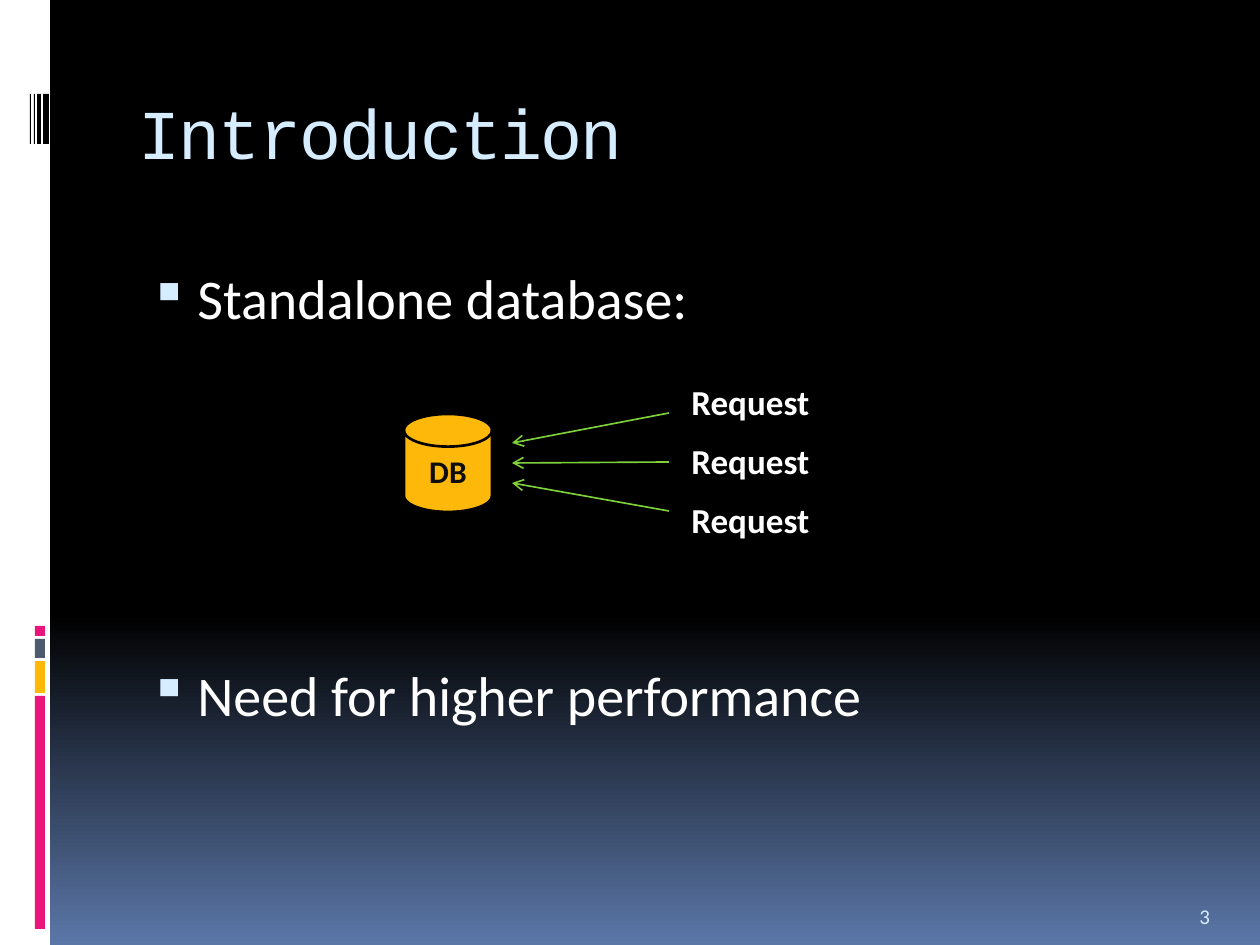
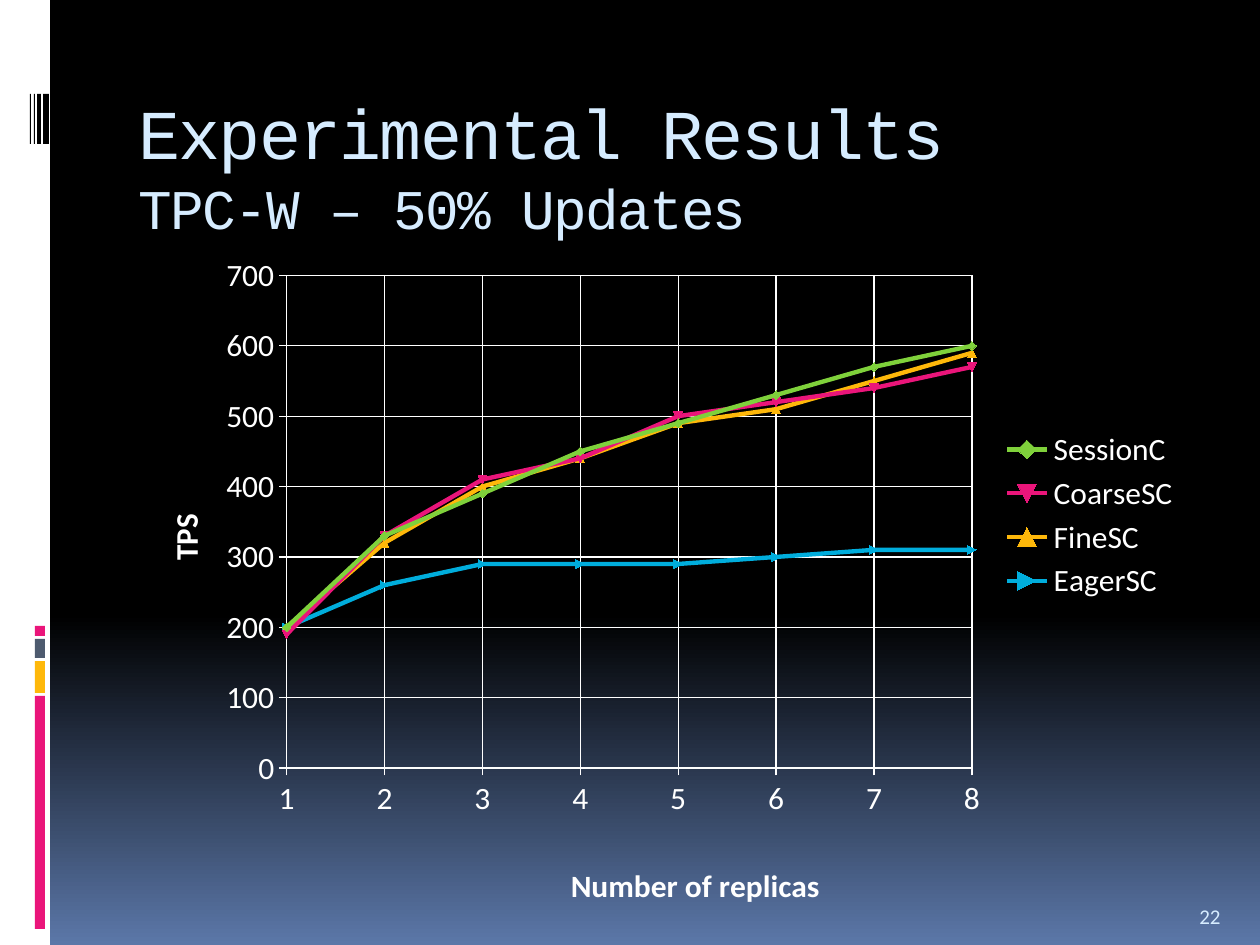
from lxml import etree
from pptx import Presentation
from pptx.chart.data import XyChartData
from pptx.dml.color import RGBColor
from pptx.enum.chart import XL_CHART_TYPE, XL_LEGEND_POSITION, XL_TICK_MARK
from pptx.enum.shapes import MSO_CONNECTOR, MSO_SHAPE
from pptx.enum.text import MSO_ANCHOR, PP_ALIGN
from pptx.oxml.ns import qn
from pptx.util import Emu, Pt

# Scale: 126 px to the inch
PX = 914400 / 126
SLIDE_W, SLIDE_H = 1260, 945

# Colours and fonts
BLACK = RGBColor(0x00, 0x00, 0x00)
WHITE = RGBColor(0xFF, 0xFF, 0xFF)
NAVY = RGBColor(0x5B, 0x77, 0xA8)
SLATE = RGBColor(0x4E, 0x5B, 0x6F)
PALE_BLUE = RGBColor(0xD6, 0xEC, 0xFF)
PINK = RGBColor(0xEA, 0x15, 0x7A)
AMBER = RGBColor(0xFE, 0xB8, 0x0A)
GREEN = RGBColor(0x7F, 0xD1, 0x3B)
CYAN = RGBColor(0x00, 0xAD, 0xDC)
INK = RGBColor(0x0D, 0x0D, 0x0D)
BODY_FONT, TITLE_FONT = "Calibri", "Courier New"

# Enum members
RECT, DISK = MSO_SHAPE.RECTANGLE, MSO_SHAPE.FLOWCHART_MAGNETIC_DISK
STRAIGHT = MSO_CONNECTOR.STRAIGHT
TOP, MIDDLE, BOTTOM = MSO_ANCHOR.TOP, MSO_ANCHOR.MIDDLE, MSO_ANCHOR.BOTTOM
CENTER = PP_ALIGN.CENTER
SCATTER = XL_CHART_TYPE.XY_SCATTER_LINES
LEGEND_BOTTOM = XL_LEGEND_POSITION.BOTTOM
TICK_OUT, TICK_NONE = XL_TICK_MARK.OUTSIDE, XL_TICK_MARK.NONE

# Text formats
TITLE = dict(name=TITLE_FONT, size=Pt(40))
SUBTITLE = dict(name=TITLE_FONT, size=Pt(32))
BODY = dict(name=BODY_FONT, size=Pt(32))
REQUEST = dict(name=BODY_FONT, size=Pt(20), bold=True)
DB_LABEL = dict(name=BODY_FONT, size=Pt(18), bold=True)
CHART_TEXT = dict(name=BODY_FONT, size=Pt(18))
AXIS_TITLE = dict(CHART_TEXT, bold=True)
PAGE_NO = dict(name=BODY_FONT, size=Pt(12))

# Side band: accent blocks as (top, height, colour), barcode as (left, width)
ACCENTS = [(696, 233, PINK), (661, 32, AMBER), (639, 19, SLATE), (626, 10, PINK)]
BARCODE = [(43, 6), (37, 4), (34, 1), (30, 1)]

# Throughput for 1 to 8 replicas
THROUGHPUT = [
    ("SessionC", GREEN, (200, 330, 390, 450, 490, 530, 570, 600)),
    ("CoarseSC", PINK, (190, 330, 410, 440, 500, 520, 540, 570)),
    ("FineSC", AMBER, (200, 320, 400, 440, 490, 510, 550, 590)),
    ("EagerSC", CYAN, (200, 260, 290, 290, 290, 300, 310, 310)),
]


def px(n):
    return Emu(round(n * PX))


def box(*lengths):
    return [px(n) for n in lengths]


def set_font(font, fmt, color):
    for key, value in fmt.items():
        setattr(font, key, value)
    font.color.rgb = color


def add_run(p, text, fmt, color):
    r = p.add_run()
    r.text = text
    set_font(r.font, fmt, color)
    return r


def add_block(slide, rect, fill, kind=RECT):
    sp = slide.shapes.add_shape(kind, *box(*rect))
    sp.shadow.inherit = False
    sp.fill.solid()
    sp.fill.fore_color.rgb = fill
    sp.line.fill.background()
    return sp


def add_textbox(slide, rect, anchor=TOP, inset_top=6):
    tf = slide.shapes.add_textbox(*box(*rect)).text_frame
    tf.word_wrap = True
    tf.vertical_anchor = anchor
    tf.margin_top = px(inset_top)
    return tf


def add_label(slide, rect, text, fmt, color, anchor=TOP):
    add_run(add_textbox(slide, rect, anchor).paragraphs[0], text, fmt, color)


def add_title(slide, title, subtitle=None):
    p = add_textbox(slide, (126, 70, 1071, 165), inset_top=20).paragraphs[0]
    runs = [add_run(p, title, TITLE, PALE_BLUE)]
    if subtitle:
        p.add_line_break()
        runs.append(add_run(p, subtitle, SUBTITLE, PALE_BLUE))
    for r in runs:
        r.font._element.set("spc", "-100")


def add_slide(prs, number, title, subtitle=None):
    """Slide with the shared background, side band, title and page number."""
    slide = prs.slides.add_slide(prs.slide_layouts[6])
    fill = slide.background.fill
    fill.gradient()
    fill.gradient_angle = 270
    for stop, position, color in zip(fill.gradient_stops, (0.65, 1), (BLACK, NAVY)):
        stop.position = position
        stop.color.rgb = color
    add_block(slide, (0, 0, 50, SLIDE_H), WHITE)
    for top, height, color in ACCENTS:
        add_block(slide, (35, top, 10, height), color)
    for left, width in BARCODE:
        add_block(slide, (left, 94, width, 50), BLACK)
    add_title(slide, title, subtitle)
    add_label(slide, (1187, 885, 63, 50), str(number), PAGE_NO, PALE_BLUE, BOTTOM)
    return slide


def add_bullet(p, text, space_before):
    add_run(p, text, BODY, WHITE)
    p.space_before = space_before
    pPr = p._p.get_or_add_pPr()
    pPr.set("marL", str(px(57)))
    pPr.set("indent", str(-px(48)))
    clr = etree.SubElement(pPr, qn("a:buClr"))
    etree.SubElement(clr, qn("a:srgbClr"), val=str(PALE_BLUE))
    etree.SubElement(pPr, qn("a:buSzPct"), val="95000")
    etree.SubElement(pPr, qn("a:buChar"), char="▪")


def add_arrow(slide, start, end):
    line = slide.shapes.add_connector(STRAIGHT, *box(*start, *end))
    line.line.color.rgb = GREEN
    line.line.width = Pt(0.94)
    etree.SubElement(line.line._get_or_add_ln(), qn("a:tailEnd"), type="arrow")
    etree.SubElement(line._element.spPr, qn("a:effectLst"))


def add_database(slide, rect, text):
    sp = add_block(slide, rect, AMBER, DISK)
    sp.line.color.rgb = BLACK
    sp.line.width = Pt(1.5)
    tf = sp.text_frame
    tf.vertical_anchor = MIDDLE
    p = tf.paragraphs[0]
    p.alignment = CENTER
    add_run(p, text, DB_LABEL, INK)


def set_layout(element, inner=False, **fractions):
    """Place a chart part by fractions of the chart area."""
    old = element.find(qn("c:layout"))
    if old is not None:
        element.remove(old)
    layout = etree.Element(qn("c:layout"))
    manual = etree.SubElement(layout, qn("c:manualLayout"))
    if inner:
        etree.SubElement(manual, qn("c:layoutTarget"), val="inner")
    for mode in ("xMode", "yMode"):
        etree.SubElement(manual, qn("c:" + mode), val="edge")
    for key, value in fractions.items():
        etree.SubElement(manual, qn("c:" + key), val=str(value))
    before = [c for c in element if c.tag in (qn("c:tx"), qn("c:legendPos"))]
    element.insert(len(before), layout)


def style_axis(axis, title, x, y):
    axis.has_major_gridlines = True
    axis.major_tick_mark, axis.minor_tick_mark = TICK_OUT, TICK_NONE
    for line in (axis.format.line, axis.major_gridlines.format.line):
        line.color.rgb = WHITE
        line.width = Pt(0.75)
    p = axis.axis_title.text_frame.paragraphs[0]
    add_run(p, title, AXIS_TITLE, WHITE)
    set_layout(axis.axis_title._element, x=x, y=y)


def add_throughput_chart(slide, rect):
    data = XyChartData()
    for name, _, values in THROUGHPUT:
        series = data.add_series(name)
        for replicas, tps in enumerate(values, 1):
            series.add_data_point(replicas, tps)
    chart = slide.shapes.add_chart(SCATTER, *box(*rect), data).chart
    chart.has_title = False
    set_font(chart.font, CHART_TEXT, WHITE)

    # Series; numbering from 1 picks the automatic marker symbols
    plot = chart.plots[0]
    plot.vary_by_categories = False
    for i, (series, (_, color, _)) in enumerate(zip(plot.series, THROUGHPUT), 1):
        series._element.find(qn("c:idx")).set("val", str(i))
        series.smooth = False
        series.format.line.color.rgb = color
        series.format.line.width = Pt(2.5)
        series.marker.size = 5
        series.marker.format.fill.solid()
        series.marker.format.fill.fore_color.rgb = color
        series.marker.format.line.color.rgb = color

    # Axes
    x_axis, y_axis = chart.category_axis, chart.value_axis
    style_axis(x_axis, "Number of replicas", 0.41, 0.93)
    style_axis(y_axis, "TPS", 0.03, 0.39)
    for axis, low, high, step in ((x_axis, 1, 8, 1), (y_axis, 0, 700, 100)):
        axis.minimum_scale, axis.maximum_scale = low, high
        axis.major_unit = step

    # Legend and plot area
    chart.has_legend = True
    chart.legend.position = LEGEND_BOTTOM
    chart.legend.include_in_layout = False
    set_layout(chart.legend._element, x=0.81, y=0.26, w=0.18, h=0.28)
    plot_area = chart._chartSpace.chart.plotArea
    set_layout(plot_area, inner=True, x=0.15, y=0.03, w=0.64, h=0.76)


def build_introduction(prs):
    slide = add_slide(prs, 3, "Introduction")
    tf = add_textbox(slide, (128, 256, 1071, 591), inset_top=8)
    add_bullet(tf.paragraphs[0], "Standalone database:", Pt(0))
    add_bullet(tf.add_paragraph(), "Need for higher performance", Pt(188))

    # Three requests converge on one database
    for i in range(3):
        add_arrow(slide, (669, 413 + 49 * i), (512, 443 + 20 * i))
        add_label(slide, (679, 374 + 59 * i, 186, 55), "Request", REQUEST, WHITE)
    add_database(slide, (404, 414, 88, 98), "DB")


def build_results(prs):
    slide = add_slide(prs, 22, "Experimental Results", "TPC-W – 50% Updates")
    add_throughput_chart(slide, (126, 256, 1071, 659))


def main():
    prs = Presentation()
    prs.slide_width, prs.slide_height = box(SLIDE_W, SLIDE_H)
    build_introduction(prs)
    build_results(prs)
    prs.save("out.pptx")


if __name__ == "__main__":
    main()
